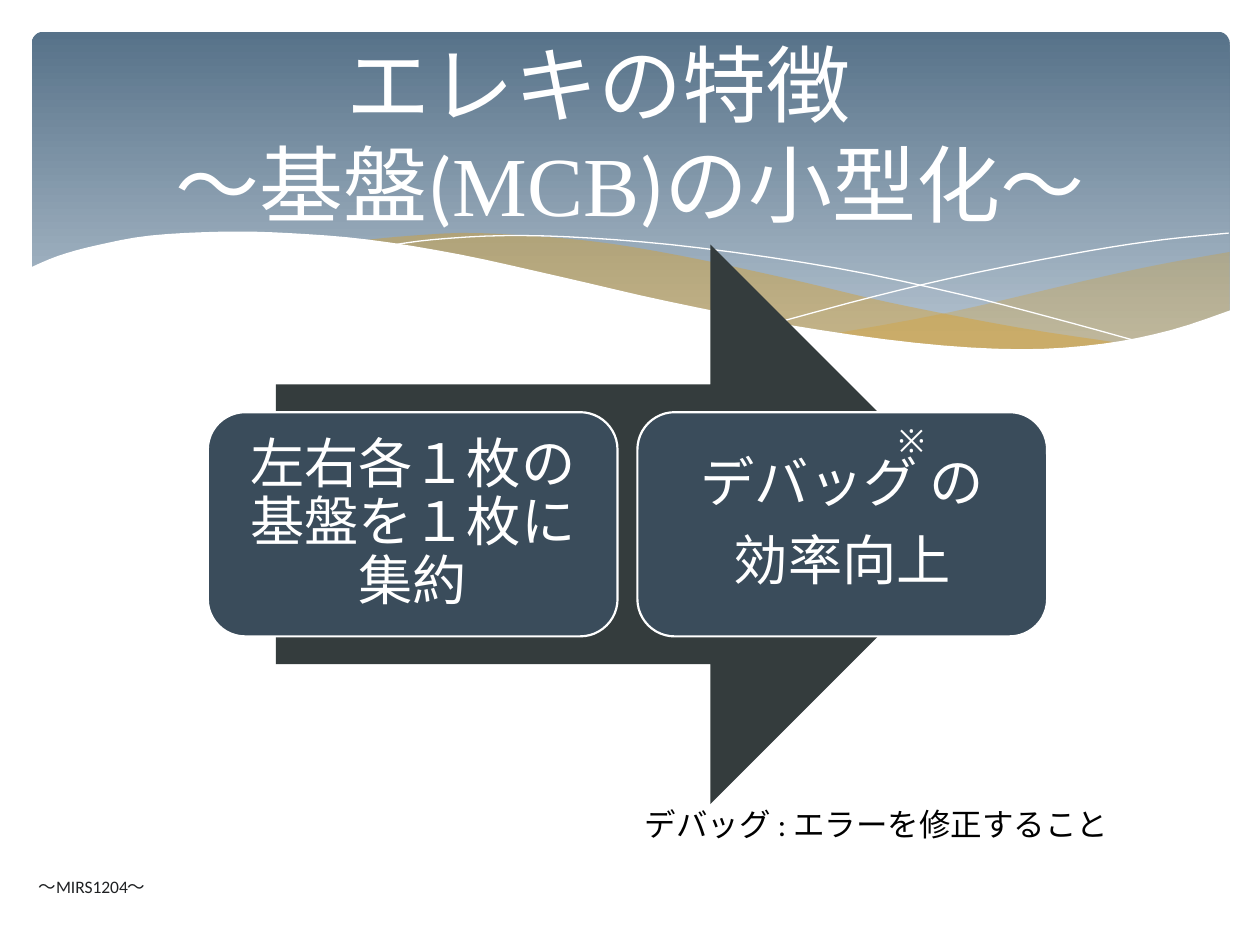
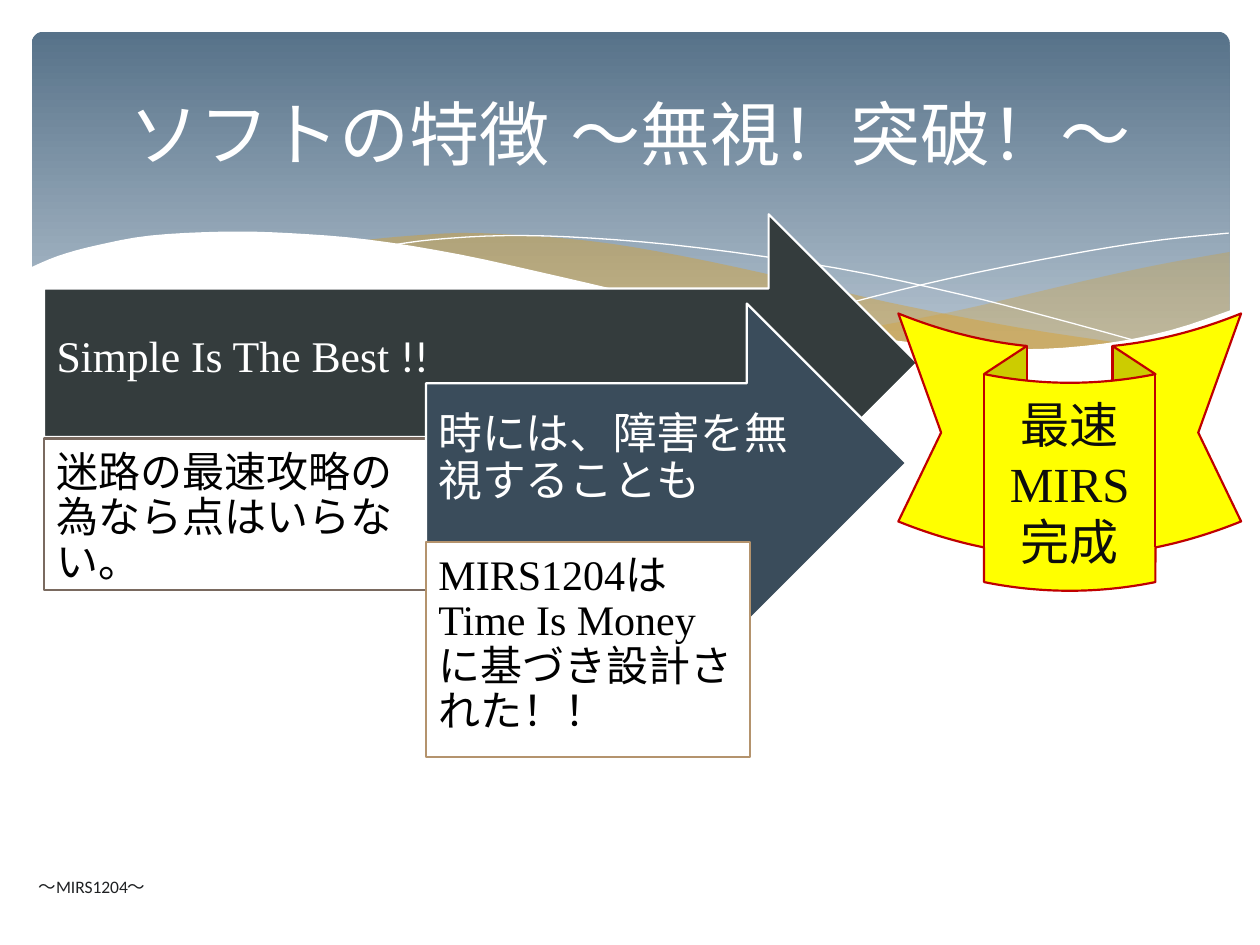
import collections

import pptx
import pptx.dml.color
import pptx.enum.shapes
import pptx.enum.text
import pptx.oxml
import pptx.oxml.ns
import pptx.util

Cm = pptx.util.Cm
Pt = pptx.util.Pt
RGBColor = pptx.dml.color.RGBColor
SHAPE = pptx.enum.shapes.MSO_SHAPE
ALIGN = pptx.enum.text.PP_ALIGN
ANCHOR = pptx.enum.text.MSO_ANCHOR
NO_FIT = pptx.enum.text.MSO_AUTO_SIZE.NONE
qn = pptx.oxml.ns.qn

WHITE = RGBColor(0xFF, 0xFF, 0xFF)
BLACK = RGBColor(0, 0, 0)
INK = RGBColor(0x0D, 0x0D, 0x0D)
FOOTER_GREY = RGBColor(0x1F, 0x21, 0x23)
SKY_DARK = RGBColor(0x57, 0x72, 0x89)
SKY_LIGHT = RGBColor(0xB2, 0xC1, 0xCE)
GOLD = RGBColor(0xDC, 0x9E, 0x1F)
CHARCOAL = RGBColor(0x34, 0x3C, 0x3D)
NAVY = RGBColor(0x3A, 0x4C, 0x5B)
BROWN = RGBColor(0x7A, 0x6A, 0x60)
TAN = RGBColor(0xB4, 0x93, 0x6D)
YELLOW = RGBColor(0xFF, 0xFF, 0)
RED = RGBColor(0xC0, 0, 0)

SANS, SERIF = "Calibri", "Times New Roman"

Box = collections.namedtuple("Box", "left top width height")
PAGE = Box(0, 0, 25.4, 19.05)

RIGHT_RIBBON = (
    [(24.79, 5.08), (23.39, 5.33), (21.87, 5.66), (19.13, 6.3), (16.79, 6.73)],
    [(16.79, 6.73), (18.59, 6.96), (20.4, 7.06), (22.15, 6.96), (23.75, 6.65),
     (24.79, 6.27)],
)
LEFT_RIBBON = (
    [(22.68, 6.93), (20.5, 6.6), (17.93, 6.1), (15.98, 5.64), (13.74, 5.16),
     (11.81, 4.85), (9.65, 4.7), (8.33, 4.75), (7.26, 4.85)],
    [(7.26, 4.85), (9.19, 5.16), (11.4, 5.64), (13.46, 6.1), (15.27, 6.48),
     (16.89, 6.76), (18.34, 6.96), (20.22, 7.06), (21.54, 7.04), (22.68, 6.93)],
)
FALLING_THREAD = (
    [(7.85, 4.95), (8.74, 4.83), (10.19, 4.75), (11.91, 4.8), (14.12, 5),
     (16.89, 5.41), (19.3, 5.92), (21.11, 6.38), (23.04, 6.91)],
)
RISING_THREAD = (
    [(15.57, 6.53), (17.65, 5.97), (19.71, 5.49), (22, 5.05), (23.47, 4.83),
     (24.77, 4.7)],
)
WHITE_WAVE = (
    [(24.82, 6.25), (23.62, 6.65), (22.23, 6.93), (20.55, 7.04), (18.44, 6.91),
     (15.9, 6.55), (13.44, 6.07), (11.35, 5.59), (9.27, 5.13), (7.42, 4.83),
     (5.84, 4.7), (4.5, 4.67), (3.02, 4.75), (1.93, 4.95), (1.17, 5.16),
     (0.58, 5.41)],
    [(0.58, 8.36), (24.82, 8.36)],
)


def inside(box, left, top, width, height):
    """Return a box whose offset is counted from the given box."""
    return Box(box.left + left, box.top + top, width, height)


def apply(target, formats):
    """Set each attribute named in the dict."""
    for name, value in formats.items():
        setattr(target, name, value)


def locate(box):
    """Turn a box in centimetres into lengths."""
    return [Cm(length) for length in box]


def smooth_curve(knots, steps=4):
    """Pass a Catmull-Rom curve through the knots."""
    padded = [knots[0], *knots, knots[-1]]
    points = [knots[0]]
    for before, start, end, after in zip(padded, padded[1:], padded[2:], padded[3:]):
        for step in range(1, steps + 1):
            t = step / steps
            points.append(tuple(
                (2 * b + (c - a) * t + (2 * a - 5 * b + 4 * c - d) * t ** 2
                 + (3 * b - a - 3 * c + d) * t ** 3) / 2
                for a, b, c, d in zip(before, start, end, after)))
    return points


def paint(shape, fill=None, line=None, weight=1.25):
    """Give a shape a flat fill and outline, or none."""
    shape.shadow.inherit = False
    if fill is None:
        shape.fill.background()
    else:
        shape.fill.solid()
        shape.fill.fore_color.rgb = fill
    if line is None:
        shape.line.fill.background()
    else:
        shape.line.color.rgb = line
        shape.line.width = Pt(weight)


def add_curves(slide, box, curves, fill=None, line=None, opacity=100):
    """Draw joined curves; a filled outline is closed."""
    points = [(Cm(x), Cm(y)) for knots in curves
              for x, y in (smooth_curve(knots) if len(knots) > 2 else knots)]
    builder = slide.shapes.build_freeform(*points[0])
    builder.add_line_segments(points[1:], close=fill is not None)
    outline = builder.convert_to_shape(Cm(box.left), Cm(box.top))
    paint(outline, fill, line, 0)
    if opacity < 100:
        tint = next(outline.element.spPr.iter(qn("a:srgbClr")))
        tint.append(pptx.oxml.parse_xml(
            f'<a:alpha {pptx.oxml.ns.nsdecls("a")} val="{opacity * 1000}"/>'))


def write(frame, paragraphs, size, color, align=ALIGN.LEFT, anchor=ANCHOR.MIDDLE,
          insets=(0.25, 0.13, 0.25, 0.13), spacing=None):
    """Fill a text frame with paragraphs of (text, font) runs."""
    apply(frame, {"word_wrap": True, "auto_size": NO_FIT, "vertical_anchor": anchor})
    sides = ("margin_left", "margin_top", "margin_right", "margin_bottom")
    apply(frame, dict(zip(sides, map(Cm, insets))))
    for number, runs in enumerate(paragraphs):
        paragraph = frame.add_paragraph() if number else frame.paragraphs[0]
        apply(paragraph, {"alignment": align, **(spacing or {})})
        for text, font in runs:
            if text == "\n":
                paragraph.add_line_break()
                continue
            run = paragraph.add_run()
            run.text = text
            apply(run.font, {"size": Pt(size), "name": font})
            run.font.color.rgb = color


def add_panel(slide, kind, box, fill, line, paragraphs, size, color, **layout):
    """Add a filled preset shape that carries text."""
    panel = slide.shapes.add_shape(kind, *locate(box))
    paint(panel, fill, line)
    write(panel.text_frame, paragraphs, size, color, **layout)


def add_label(slide, box, text, size, color, anchor=ANCHOR.TOP):
    """Add a one-line text box."""
    label = slide.shapes.add_textbox(*locate(box))
    write(label.text_frame, [[(text, SANS)]], size, color, anchor=anchor)


def draw_band(slide, box):
    """Draw the sky band with its waves."""
    sky = slide.shapes.add_shape(
        SHAPE.ROUNDED_RECTANGLE, *locate(inside(box, 0.64, 0.64, 24.15, 6.86)))
    sky.adjustments[0] = 0.034
    paint(sky)
    sky.fill.gradient()
    sky.fill.gradient_angle = 270
    for stop, color, position in zip(
            sky.fill.gradient_stops, (SKY_DARK, SKY_LIGHT), (0, 0.9)):
        stop.color.rgb = color
        stop.position = position
    add_curves(slide, box, RIGHT_RIBBON, fill=GOLD, opacity=29)
    add_curves(slide, box, LEFT_RIBBON, fill=GOLD, opacity=40)
    add_curves(slide, box, FALLING_THREAD, line=WHITE)
    add_curves(slide, box, RISING_THREAD, line=WHITE)
    add_curves(slide, box, WHITE_WAVE, fill=WHITE)


def share_band(slide, layout):
    """Draw the band once and hand it over to the layout."""
    for placeholder in list(layout.placeholders)[1:]:
        layout.shapes.element.remove(placeholder.element)
    draw_band(slide, PAGE)
    for part in list(slide.shapes)[1:]:
        layout.shapes.element.append(part.element)


def add_heading(slide, box, runs, size):
    """Fill the title and add the footer label."""
    title = slide.shapes.title
    area = inside(box, 1.27, 0.94, 22.86, 3.48)
    apply(title, dict(zip(Box._fields, locate(area))))
    write(title.text_frame, [runs], size, WHITE, align=ALIGN.CENTER)
    add_label(slide, inside(box, 0.53, 17.37, 10.52, 1.02), "～MIRS1204～", 10,
              FOOTER_GREY, ANCHOR.MIDDLE)


def draw_board_steps(slide, box):
    """Draw the wide arrow with two cards and the footnote."""
    arrow = slide.shapes.add_shape(
        SHAPE.RIGHT_ARROW, *locate(inside(box, 1.37, 0, 14.4, box.height)))
    paint(arrow, CHARCOAL)
    gap, height = 0.4, 4.52
    width = (box.width - gap) / 2
    cards = (["左右各１枚の基盤を１枚に集約"], ["デバッグ の", "効率向上"])
    for column, lines in enumerate(cards):
        card = inside(box, column * (width + gap), (box.height - height) / 2,
                      width, height)
        add_panel(slide, SHAPE.ROUNDED_RECTANGLE, card, NAVY, WHITE,
                  [[(line, SANS)] for line in lines], 31, WHITE,
                  align=ALIGN.CENTER, insets=(0.33,) * 4,
                  spacing={"line_spacing": 0.9, "space_after": Pt(11)})
    add_label(slide, inside(box, 13.67, 3.43, 1.4, 1.02), "※", 18, WHITE)
    add_label(slide, inside(box, 8.56, 11.17, 10.21, 1.02),
              "デバッグ : エラーを修正すること", 18, BLACK)


def draw_strategy(slide, box):
    """Draw two stepped arrows with notes and the goal ribbon."""
    tight = {"line_spacing": 0.9}
    steps = (
        (0, 0, 17.6, 5.99, CHARCOAL, [("Simple Is The Best ", SERIF), ("!!", SANS)],
         4.52, 7.8, 3.05, BROWN, [("迷路の最速攻略の為なら点はいらない。", SANS)]),
        (7.7, 1.8, 9.68, 6.43, NAVY, [("時には、障害を無視することも", SANS)],
         6.6, 6.53, 4.34, TAN,
         [("MIRS1204", SERIF), ("は ", SANS), ("Time Is Money ", SERIF),
          ("に基づき設計された！！", SANS)]),
    )
    for (left, top, width, height, fill, slogan,
         note_top, note_width, note_height, edge, note) in steps:
        add_panel(slide, SHAPE.RIGHT_ARROW, inside(box, left, top, width, height),
                  fill, WHITE, [slogan], 25, WHITE,
                  insets=(0.25, 0.25, 0.71, 0.43), spacing=tight)
        add_panel(slide, SHAPE.RECTANGLE,
                  inside(box, left, note_top, note_width, note_height),
                  WHITE, edge, [note], 24, BLACK, anchor=ANCHOR.TOP,
                  insets=(0.25,) * 4, spacing=tight)
    ribbon_width = 6.91
    add_panel(slide, SHAPE.CURVED_DOWN_RIBBON,
              inside(box, box.width - ribbon_width, 2, ribbon_width, 5.59),
              YELLOW, RED, [[("最速", SANS), ("MIRS", SERIF), ("完成", SANS)]],
              28, INK, align=ALIGN.CENTER)


def main():
    """Build both slides and save them."""
    deck = pptx.Presentation()
    deck.slide_width, deck.slide_height = Cm(PAGE.width), Cm(PAGE.height)
    layout = deck.slide_layouts[5]

    hardware = deck.slides.add_slide(layout)
    share_band(hardware, layout)
    add_heading(hardware, PAGE,
                [("エレキの特徴\t", SANS), ("\n", SANS), ("～基盤(", SANS),
                 ("MCB", SERIF), (")の小型化～", SANS)], 48)
    draw_board_steps(hardware, Box(4.19, 4.93, 16.92, 11.28))

    software = deck.slides.add_slide(layout)
    add_heading(software, PAGE, [("ソフトの特徴\t～無視！突破！～", SANS)], 40)
    draw_strategy(software, Box(0.89, 4.32, 24.13, 10.94))

    deck.save("out.pptx")


if __name__ == "__main__":
    main()
